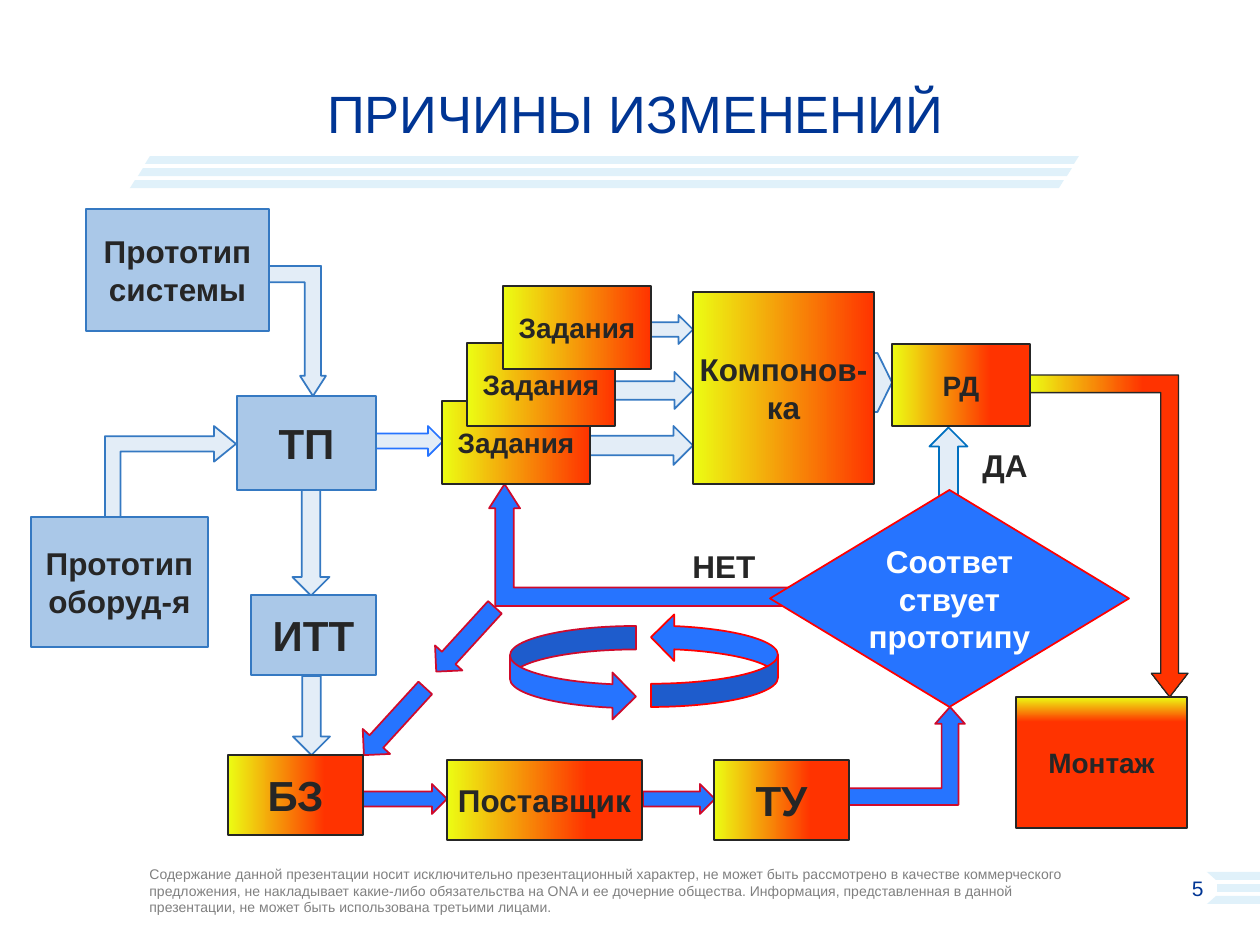
from pptx import Presentation
from pptx.dml.color import RGBColor as RGB
from pptx.enum.shapes import MSO_SHAPE as Kind
from pptx.enum.text import MSO_ANCHOR as Anchor, PP_ALIGN as Align
from pptx.util import Emu, Pt

PX = 914400 / 126
NAVY = RGB(0x00, 0x35, 0x94)
PALE = RGB(0xE0, 0xF1, 0xFA)
GRAY = RGB(0x80, 0x80, 0x80)
DARK = RGB(0x26, 0x26, 0x26)
WHITE = RGB(0xFF, 0xFF, 0xFF)
ICE = RGB(0xE3, 0xED, 0xF7)
SKY = RGB(0xAA, 0xC8, 0xE8)
STEEL = RGB(0x35, 0x79, 0xC2)
TEAL = RGB(0x00, 0x70, 0xC0)
BLUE = RGB(0x26, 0x74, 0xFF)
WINE = RGB(0xCF, 0x0A, 0x2C)
RED = RGB(0xFF, 0x00, 0x00)
LIME = RGB(0xEC, 0xFD, 0x13)
FLAME = RGB(0xFF, 0x33, 0x00)

NOTE = (
    "Содержание данной презентации носит исключительно презентационный характер, "
    "не может быть рассмотрено в качестве коммерческого предложения, не накладывает "
    "какие-либо обязательства на ONA и ее дочерние общества. Информация, представленная "
    "в данной презентации, не может быть использована третьими лицами."
)


def px(n):
    return Emu(round(n * PX))


def put(box, spot):
    """Turn a spot within a box into slide lengths."""
    x, y, w, h = spot
    return px(box[0] + x), px(box[1] + y), px(w), px(h)


def write(frame, text, size=18, color=DARK, bold=True, align=Align.CENTER,
          anchor=Anchor.MIDDLE, wrap=True, space=None):
    frame.word_wrap = wrap
    frame.vertical_anchor = anchor
    for i, line in enumerate(text.split("\n")):
        para = frame.add_paragraph() if i else frame.paragraphs[0]
        para.alignment = align
        if space:
            para.line_spacing = space
        run = para.add_run()
        run.text = line
        font = run.font
        font.name, font.size, font.bold = "Arial", Pt(size), bold
        font.color.rgb = color


def label(slide, box, spot, text, **form):
    write(slide.shapes.add_textbox(*put(box, spot)).text_frame, text, **form)


def paint(shape, fill, line=None, width=1):
    shape.shadow.inherit = False
    shape.fill.solid()
    shape.fill.fore_color.rgb = fill
    if line is None:
        shape.line.fill.background()
    else:
        shape.line.color.rgb = line
        shape.line.width = Pt(width)


def part(slide, box, kind, spot, fill=ICE, line=STEEL, turn=0, flip="", adj=(), width=1):
    shape = slide.shapes.add_shape(kind, *put(box, spot))
    paint(shape, fill, line, width)
    shape.rotation = turn
    for i, value in enumerate(adj):
        shape.adjustments[i] = value
    if flip:
        shape.element.spPr.xfrm.set("flip" + flip, "1")
    return shape


def blend(shape, end, angle=0):
    """Fill a shape from lime to flame, reaching flame at the end share."""
    shape.fill.gradient()
    shape.fill.gradient_angle = angle
    for stop, color, at in zip(shape.fill.gradient_stops, (LIME, FLAME), (0, end)):
        stop.color.rgb = color
        stop.position = at


def cool(slide, box, spot, text, size=18):
    shape = part(slide, box, Kind.RECTANGLE, spot, SKY)
    write(shape.text_frame, text, size)


def warm(slide, box, spot, text, size=16, end=0.72, angle=0):
    shape = part(slide, box, Kind.RECTANGLE, spot, FLAME, DARK, width=0.75)
    blend(shape, end, angle)
    write(shape.text_frame, text, size, wrap=False)


def outline(slide, box, points):
    spots = [(px(box[0] + x), px(box[1] + y)) for x, y in points]
    pen = slide.shapes.build_freeform(*spots[0], scale=1.0)
    pen.add_line_segments(spots[1:])
    paint(pen.convert_to_shape(), PALE)


def header(slide, box):
    for top in (84, 96, 108):
        left = 20 - (top - 84) * 5 // 8
        outline(slide, box, [(left, top), (left + 929, top),
                             (left + 924, top + 8), (left - 5, top + 8)])
    label(slide, box, (40, 0, 931, 79), "ПРИЧИНЫ ИЗМЕНЕНИЙ", size=30, color=NAVY,
          bold=False, anchor=Anchor.BOTTOM, space=0.9)


def footer(slide, box):
    for top, start, stop in ((13, 1070, 1079), (25, 1080, 1080), (37, 1079, 1070)):
        outline(slide, box, [(start, top), (1123, top), (1123, top + 8), (stop, top + 8)])
    label(slide, box, (0, 0, 954, 63), NOTE, size=8, color=GRAY, bold=False, align=Align.LEFT)
    label(slide, box, (1026, 13, 53, 33), "5", size=12, color=NAVY, bold=False,
          align=Align.RIGHT)


def inputs(slide, box):
    """Prototypes and the documents that follow from them."""
    for spot in ((227, 315, 106, 37), (241, 488, 79, 37)):
        part(slide, box, Kind.RIGHT_ARROW, spot, turn=90)
    part(slide, box, Kind.RIGHT_ARROW, (344, 217, 68, 30), line=BLUE)
    part(slide, box, Kind.BENT_UP_ARROW, (235, 57, 60, 130), flip="V",
         adj=[0.271, 0.216, 0.336])
    part(slide, box, Kind.BENT_UP_ARROW, (94, 197, 91, 131), turn=90, flip="H",
         adj=[0.17, 0.196, 0.242])
    cool(slide, box, (55, 0, 183, 122), "Прототип\nсистемы")
    cool(slide, box, (0, 308, 177, 130), "Прототип\nоборуд-я")
    cool(slide, box, (206, 187, 139, 94), "ТП", 24)
    cool(slide, box, (220, 386, 125, 80), "ИТТ", 24)


def check(slide, box):
    """The test against the prototype and the loop back."""
    part(slide, box, Kind.RIGHT_ARROW, (563, 5, 73, 38), line=TEAL, turn=270)
    part(slide, box, Kind.BENT_UP_ARROW, (140, 44, 299, 122), BLUE, WINE, turn=180,
         flip="V", adj=[0.152, 0.127, 0.199])
    part(slide, box, Kind.CURVED_LEFT_ARROW, (302, 174, 127, 93), BLUE, RED, flip="V")
    part(slide, box, Kind.CURVED_RIGHT_ARROW, (161, 186, 126, 94), BLUE, WINE)
    for spot in ((73, 181, 87, 37), (0, 263, 91, 37)):
        part(slide, box, Kind.RIGHT_ARROW, spot, BLUE, WINE, turn=132.4)
    frame = part(slide, box, Kind.DIAMOND, (421, 50, 359, 217), BLUE, RED).text_frame
    frame.margin_left = frame.margin_right = px(8)
    frame.margin_top = frame.margin_bottom = px(4)
    write(frame, "Соответ ствует прототипу", color=WHITE)
    for spot, text in (((331, 101, 89, 50), "НЕТ"), ((621, 0, 71, 50), "ДА")):
        label(slide, box, spot, text, align=Align.LEFT, anchor=Anchor.TOP, wrap=False)


def supply(slide, box):
    for spot in ((135, 87, 84, 30), (415, 87, 72, 30)):
        part(slide, box, Kind.RIGHT_ARROW, spot, BLUE, WINE)
    part(slide, box, Kind.BENT_UP_ARROW, (621, 10, 116, 98), BLUE, WINE,
         adj=[0.171, 0.152, 0.173])
    warm(slide, box, (0, 58, 135, 80), "БЗ", 24)
    warm(slide, box, (219, 63, 195, 80), "Поставщик", 18)
    warm(slide, box, (486, 63, 135, 80), "ТУ", 24)
    warm(slide, box, (788, 0, 171, 131), "Монтаж", end=0.19, angle=270)


def design(slide, box):
    """Tasks, layout and working documents."""
    for spot in ((208, 29, 43, 29), (173, 86, 78, 37), (148, 140, 103, 39)):
        part(slide, box, Kind.RIGHT_ARROW, spot)
    part(slide, box, Kind.PENTAGON, (421, 67, 29, 59))
    bend = part(slide, box, Kind.BENT_UP_ARROW, (587, 89, 159, 322), FLAME, DARK,
                flip="V", adj=[0.111, 0.115, 0.149], width=0.75)
    blend(bend, 0.72)
    for x, y in ((0, 115), (25, 57), (61, 0)):
        warm(slide, box, (x, y, 148, 83), "Задания", end=1)
    warm(slide, box, (251, 6, 181, 192), "Компонов-\nка", 18, end=1)
    warm(slide, box, (450, 58, 138, 82), "РД")


def main():
    deck = Presentation()
    deck.slide_width, deck.slide_height = px(1260), px(945)
    slide = deck.slides.add_slide(deck.slide_layouts[6])
    footer(slide, (137, 859))
    header(slide, (130, 72))
    inputs(slide, (31, 209))
    check(slide, (349, 440))
    supply(slide, (228, 697))
    design(slide, (442, 286))
    deck.save("out.pptx")


if __name__ == "__main__":
    main()
